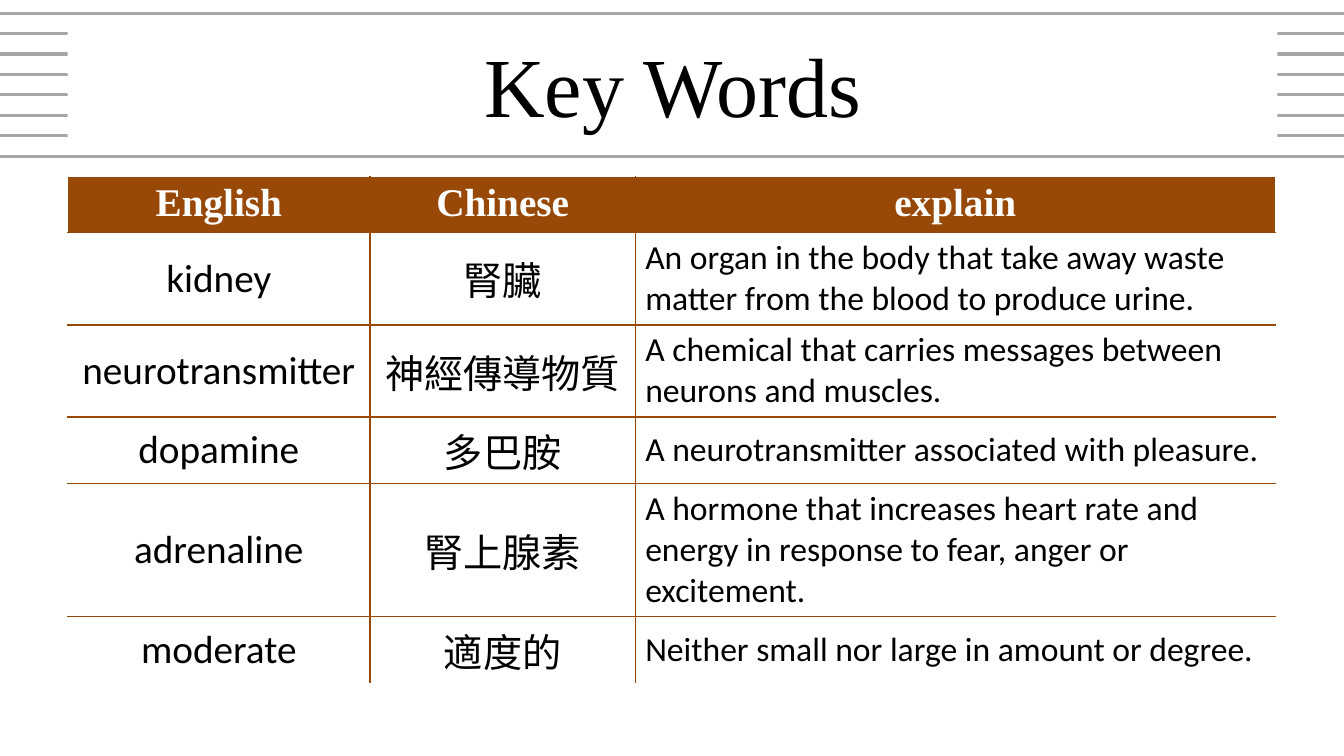
from lxml.etree import SubElement
from pptx import Presentation
from pptx.dml.color import RGBColor
from pptx.enum.shapes import MSO_CONNECTOR, MSO_SHAPE
from pptx.enum.text import MSO_ANCHOR, PP_ALIGN
from pptx.oxml.ns import qn
from pptx.util import Inches, Pt

WHITE = RGBColor(255, 255, 255)
BLACK = RGBColor(0, 0, 0)
GREY = RGBColor(0xA6, 0xA6, 0xA6)
BROWN = RGBColor(0x98, 0x48, 0x07)

SERIF, SANS, HAN = "Times New Roman", "Calibri", "Noto Sans CJK SC"
HEADS = ["English", "Chinese", "explain"]
WORDS = [
    ("kidney", "腎臟", "An organ in the body that take away waste matter "
     "from the blood to produce urine."),
    ("neurotransmitter", "神經傳導物質",
     "A chemical that carries messages between neurons and muscles."),
    ("dopamine", "多巴胺", "A neurotransmitter associated with pleasure."),
    ("adrenaline", "腎上腺素", "A hormone that increases heart rate and energy "
     "in response to fear, anger or excitement."),
    ("moderate", "適度的", "Neither small nor large in amount or degree."),
]
WIDTHS = [3, 2.63, 6.35]
HEIGHTS = [0.56, 0.9, 0.9, 0.61, 1.3, 0.61]
# Font, size and alignment of each body column
STYLES = [
    dict(font=SANS, size=28),
    dict(font=HAN, size=28),
    dict(font=SANS, size=24, align=PP_ALIGN.LEFT),
]


def write(frame, text, font=SERIF, size=28, color=BLACK, bold=False,
          align=PP_ALIGN.CENTER):
    para = frame.paragraphs[0]
    para.alignment = align
    run = para.add_run()
    run.text = text
    run.font.name, run.font.size = font, Pt(size)
    run.font.color.rgb, run.font.bold = color, bold
    if font == HAN:
        SubElement(run.font._element, qn("a:ea"), typeface=font)


def edge(cell, side, color):
    line = SubElement(cell._tc.get_or_add_tcPr(), qn("a:ln" + side),
                      w=str(Pt(1)))
    fill = SubElement(line, qn("a:solidFill"))
    SubElement(fill, qn("a:srgbClr"), val=str(color))


def add_staff(slide, left, top, width, height, count=8):
    # Evenly spaced rules across the slide
    for i in range(count):
        y = Inches(top + height * i / (count - 1))
        rule = slide.shapes.add_connector(
            MSO_CONNECTOR.STRAIGHT, Inches(left), y, Inches(left + width), y)
        rule.line.color.rgb = GREY
        rule.line.width = Pt(2.25)
        SubElement(rule._element.spPr, qn("a:effectLst"))


def add_title(slide, left, top, width, height, text):
    # White panel that masks the middle of the rules
    panel = slide.shapes.add_shape(
        MSO_SHAPE.RECTANGLE, Inches(left), Inches(top), Inches(width),
        Inches(height))
    panel.shadow.inherit = False
    panel.fill.solid()
    panel.fill.fore_color.rgb = WHITE
    panel.line.fill.background()
    panel.text_frame.word_wrap = True
    panel.text_frame.vertical_anchor = MSO_ANCHOR.MIDDLE
    write(panel.text_frame, text, size=60)


def add_words(slide, left, top, width, height):
    rows = [HEADS, *WORDS]
    table = slide.shapes.add_table(
        len(rows), len(HEADS), Inches(left), Inches(top), Inches(width),
        Inches(height)).table
    table.first_row = table.horz_banding = False
    for col, size in zip(table.columns, WIDTHS):
        col.width = Inches(size)
    for row, size in zip(table.rows, HEIGHTS):
        row.height = Inches(size)

    last_row, last_col = len(rows) - 1, len(HEADS) - 1
    for r, row in enumerate(rows):
        for c, text in enumerate(row):
            cell = table.cell(r, c)
            # Brown inner borders, white outer ones
            outer = {"L": c == 0, "R": c == last_col,
                     "T": r == 0, "B": r == last_row}
            for side, is_out in outer.items():
                edge(cell, side, WHITE if is_out else BROWN)
            cell.fill.solid()
            if r == 0:
                cell.fill.fore_color.rgb = BROWN
                write(cell.text_frame, text, color=WHITE, bold=True)
            else:
                cell.fill.fore_color.rgb = WHITE
                cell.vertical_anchor = MSO_ANCHOR.MIDDLE
                write(cell.text_frame, text, **STYLES[c])


def main():
    deck = Presentation()
    deck.slide_width, deck.slide_height = Inches(13.33), Inches(7.5)
    slide = deck.slides.add_slide(deck.slide_layouts[6])
    add_staff(slide, -0.11, 0.13, 13.52, 1.42)
    add_title(slide, 0.67, 0.28, 12, 1.11, "Key Words")
    add_words(slide, 0.67, 1.75, sum(WIDTHS), sum(HEIGHTS))
    deck.save("out.pptx")


if __name__ == "__main__":
    main()
